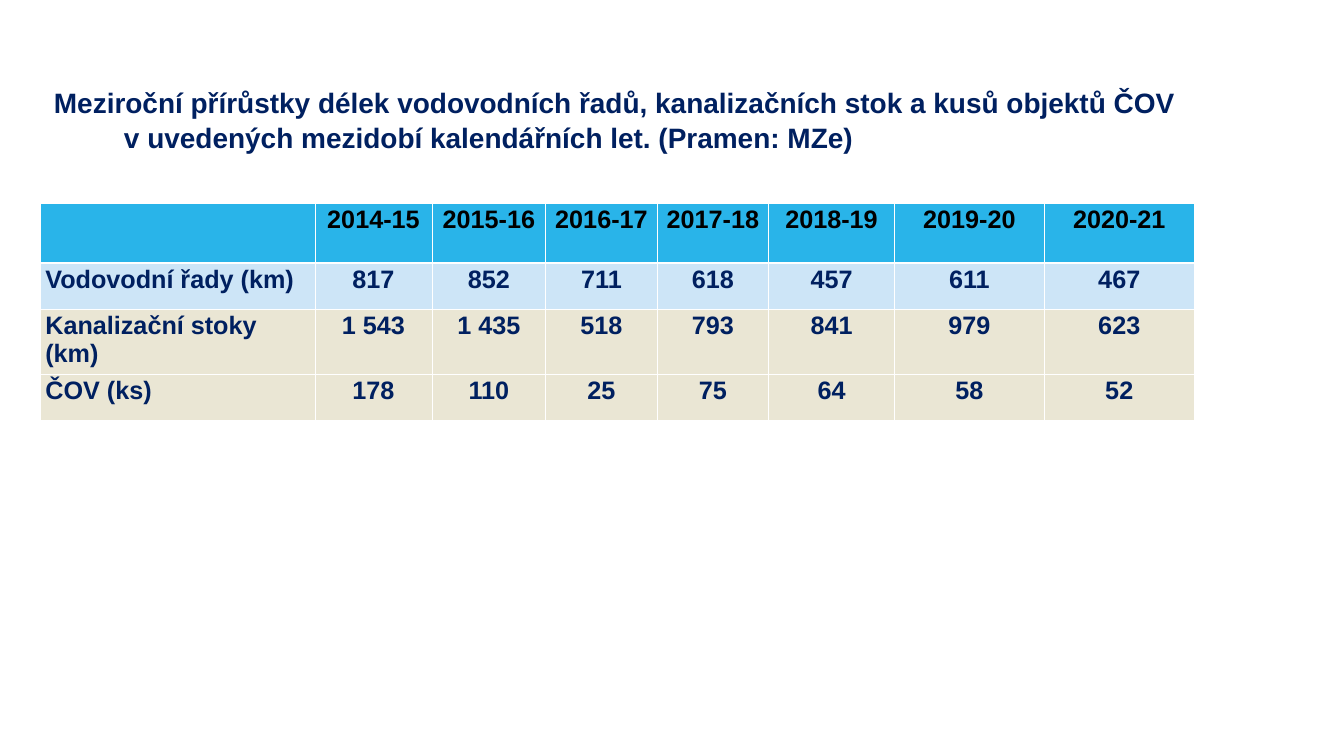
from lxml import etree
from pptx import Presentation
from pptx.dml.color import RGBColor
from pptx.enum.text import MSO_ANCHOR, MSO_AUTO_SIZE, PP_ALIGN
from pptx.oxml.ns import qn
from pptx.util import Inches, Pt

LEFT, CENTER = PP_ALIGN.LEFT, PP_ALIGN.CENTER
TOP = MSO_ANCHOR.TOP
NO_FIT = MSO_AUTO_SIZE.NONE
TITLE_ONLY = 5

COLORS = {"navy": "002060", "black": "000000", "white": "FFFFFF",
          "header": "29B4E9", "blue": "CDE5F7", "sand": "EAE6D4"}

TITLE = ("Meziroční přírůstky délek vodovodních řadů, kanalizačních stok a kusů objektů ČOV"
         "\vv uvedených mezidobí kalendářních let. (Pramen: MZe)")
ROWS = [
    ["", "2014-15", "2015-16", "2016-17", "2017-18", "2018-19", "2019-20", "2020-21"],
    ["Vodovodní řady (km)", "817", "852", "711", "618", "457", "611", "467"],
    ["Kanalizační stoky (km)", "1 543", "1 435", "518", "793", "841", "979", "623"],
    ["ČOV (ks)", "178", "110", "25", "75", "64", "58", "52"],
]
ROW_FILLS = ["header", "blue", "sand", "sand"]
# Shares of the slide's width and height, in percent
COL_WIDTHS = [20.44, 8.7, 8.47, 8.29, 8.29, 9.37, 11.14, 11.17]
ROW_HEIGHTS = [7.87, 6.07, 8.67, 6.07]


def rgb(name):
    return RGBColor.from_string(COLORS[name])


def write(tf, text, size, color="navy", align=LEFT, font="Arial", bold=True):
    tf.text = text
    p = tf.paragraphs[0]
    p.alignment = align
    p.font.size = Pt(size)
    p.font.name = font
    p.font.bold = bold
    p.font.color.rgb = rgb(color)
    return p


def set_border(cell, side, width, color="white"):
    """Add one border line; sides must come in the order L, R, T, B, before the fill."""
    ln = etree.SubElement(cell._tc.get_or_add_tcPr(), qn(f"a:ln{side}"), w=str(Pt(width)))
    fill = etree.SubElement(ln, qn("a:solidFill"))
    etree.SubElement(fill, qn("a:srgbClr"), val=COLORS[color])


class SlideBuilder:
    margin = 3

    def __init__(self, prs):
        self.prs = prs
        self.slide = prs.slides.add_slide(prs.slide_layouts[TITLE_ONLY])

    def x(self, percent):
        return round(self.prs.slide_width * percent / 100)

    def y(self, percent):
        return round(self.prs.slide_height * percent / 100)

    def title(self, text, top, width, height, hanging):
        sp = self.slide.shapes.title
        sp.left, sp.top = self.x(self.margin), self.y(top)
        sp.width, sp.height = self.x(width), self.y(height)
        tf = sp.text_frame
        tf.word_wrap = True
        tf.auto_size = NO_FIT
        tf.vertical_anchor = TOP
        tf.margin_left = tf.margin_right = Inches(0.27)
        tf.margin_top = tf.margin_bottom = Inches(0.13)
        p = write(tf, text, 40)
        p.line_spacing = 1.05
        pPr = p._p.get_or_add_pPr()
        pPr.set("marL", str(self.x(hanging)))
        pPr.set("indent", str(-self.x(hanging)))

    def table(self, rows, fills, top, widths, heights):
        table = self.slide.shapes.add_table(
            len(rows), len(widths), self.x(self.margin), self.y(top),
            self.x(sum(widths)), self.y(sum(heights))).table
        for column, width in zip(table.columns, widths):
            column.width = self.x(width)
        for i, (values, fill) in enumerate(zip(rows, fills)):
            table.rows[i].height = self.y(heights[i])
            for j, value in enumerate(values):
                self.cell(table.cell(i, j), value, fill, i, j)

    def cell(self, cell, value, fill, row, column):
        write(cell.text_frame, value, 36, color="navy" if row else "black",
              align=CENTER if column else LEFT)
        cell.vertical_anchor = TOP
        cell.margin_left = cell.margin_right = Inches(0.1)
        cell.margin_top = cell.margin_bottom = Inches(0.05)
        top, bottom = (3 if row == 1 else 1), (3 if row == 0 else 1)
        for side, width in zip("LRTB", (1, 1, top, bottom)):
            set_border(cell, side, width)
        cell.fill.solid()
        cell.fill.fore_color.rgb = rgb(fill)


def main():
    prs = Presentation()
    prs.slide_width, prs.slide_height = Inches(26.67), Inches(15)
    s = SlideBuilder(prs)
    s.title(TITLE, top=10.2, width=91.19, height=10.73, hanging=5.21)
    s.table(ROWS, ROW_FILLS, top=26.93, widths=COL_WIDTHS, heights=ROW_HEIGHTS)
    prs.save("out.pptx")


if __name__ == "__main__":
    main()
